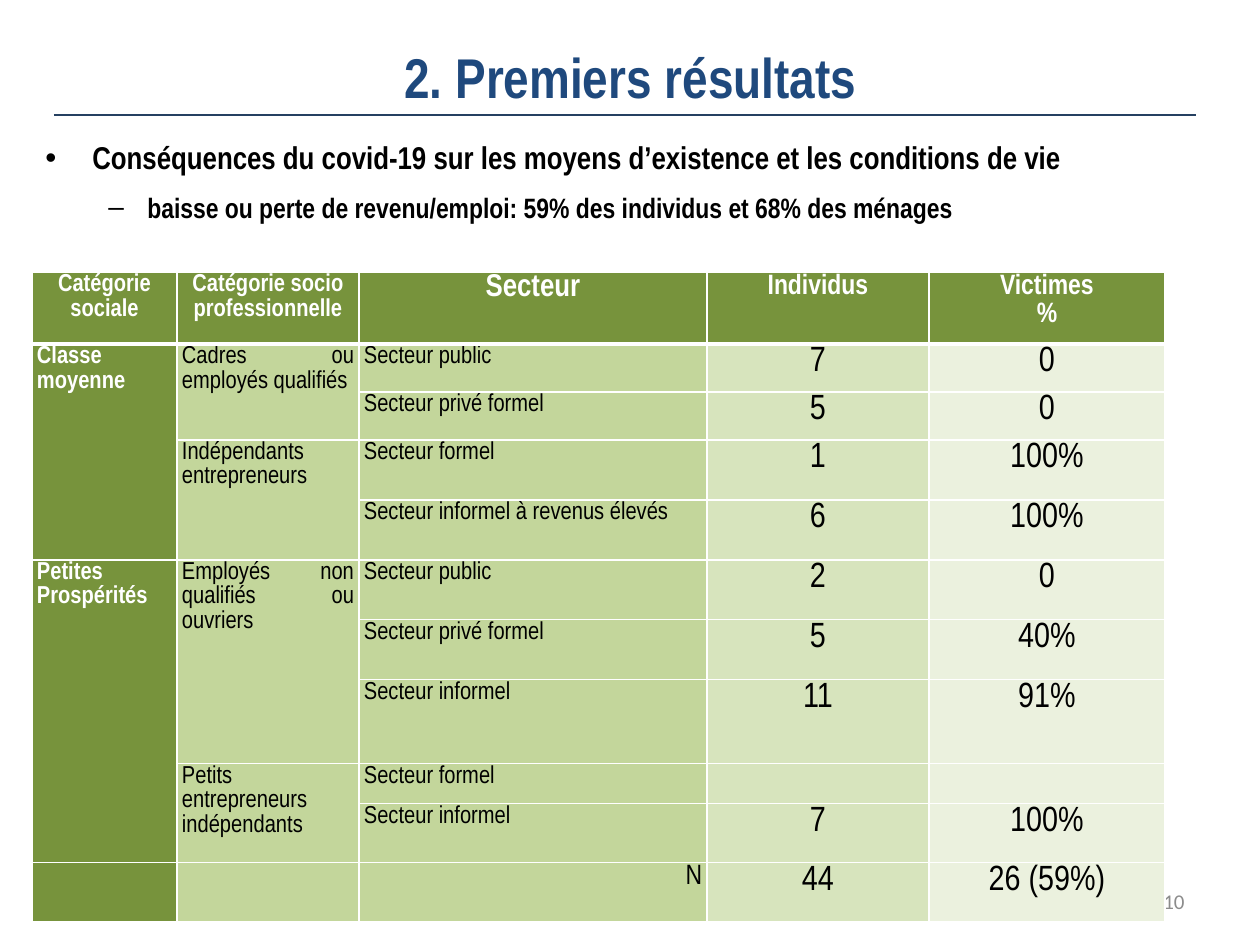
from dataclasses import dataclass

from lxml import etree
from pptx import Presentation
from pptx.dml.color import RGBColor
from pptx.enum.shapes import MSO_CONNECTOR
from pptx.enum.text import MSO_ANCHOR, PP_ALIGN
from pptx.oxml.ns import qn
from pptx.util import Emu, Pt

LEFT, CENTER, RIGHT, JUSTIFY = PP_ALIGN.LEFT, PP_ALIGN.CENTER, PP_ALIGN.RIGHT, PP_ALIGN.JUSTIFY
TOP, MIDDLE = MSO_ANCHOR.TOP, MSO_ANCHOR.MIDDLE
STRAIGHT = MSO_CONNECTOR.STRAIGHT
PX = 914400 / 126


@dataclass(frozen=True)
class Theme:
    """Colours, fonts and type sizes of the slide."""
    font: str = "Arial Narrow"
    number_font: str = "Calibri"
    title: str = "1F497D"
    rule: str = "254061"
    text: str = "000000"
    muted: str = "8C8C8C"
    white: str = "FFFFFF"
    columns: tuple = ("77933C", "C3D69B", "C3D69B", "D7E4BD", "EBF1DE")
    title_size: int = 32
    bullet_sizes: tuple = (18, 16)
    header_sizes: tuple = (14, 14, 18, 16, 16)
    label_size: int = 14
    total_size: int = 16
    value_size: int = 20
    number_size: int = 12


def emu(px):
    """Turn px into EMU."""
    return Emu(round(px * PX))


class SlideBuilder:
    """Holds the theme and the current slide."""

    def __init__(self, slide, theme):
        self.s, self.t = slide, theme

    def run(self, p, text, size, color, bold=False, font=None):
        """Add one styled run."""
        r = p.add_run()
        r.text = text
        r.font.size, r.font.bold = Pt(size), bold
        r.font.name = font or self.t.font
        r.font.color.rgb = RGBColor.from_string(color)

    def box(self, x, y, w, h, anchor=TOP):
        """Add a wrapping text box and return its text frame."""
        tf = self.s.shapes.add_textbox(emu(x), emu(y), emu(w), emu(h)).text_frame
        tf.word_wrap, tf.vertical_anchor = True, anchor
        return tf

    def label(self, x, y, w, h, text, align, **style):
        """Add a one-paragraph text box."""
        p = self.box(x, y, w, h, MIDDLE).paragraphs[0]
        p.alignment = align
        self.run(p, text, **style)

    def bullets(self, x, y, w, h, items):
        """Add a bulleted list of (level, char, margin, hang, text)."""
        tf = self.box(x, y, w, h)
        for i, (level, char, margin, hang, text) in enumerate(items):
            p = tf.add_paragraph() if i else tf.paragraphs[0]
            p.level, p.alignment = level, JUSTIFY
            p.space_before, p.space_after = Pt(2), Pt(6)
            pPr = p._p.get_or_add_pPr()
            pPr.set("marL", str(emu(margin)))
            pPr.set("indent", str(-emu(hang)))
            etree.SubElement(pPr, qn("a:buFont"), typeface="Arial")
            etree.SubElement(pPr, qn("a:buChar"), char=char)
            self.run(p, text, self.t.bullet_sizes[level], self.t.text, True)

    def rule(self, x1, x2, y):
        """Add a thin horizontal line."""
        sp = self.s.shapes.add_connector(STRAIGHT, emu(x1), emu(y), emu(x2), emu(y))
        sp.line.width = Pt(0.75)
        sp.line.color.rgb = RGBColor.from_string(self.t.rule)
        etree.SubElement(sp._element.spPr, qn("a:effectLst"))

    def borders(self, cell, **widths):
        """Draw white borders of the given point widths."""
        tcPr = cell._tc.get_or_add_tcPr()
        for side in "LRTB":
            ln = etree.SubElement(tcPr, qn(f"a:ln{side}"), w=str(Pt(widths.get(side, 1))))
            fill = etree.SubElement(ln, qn("a:solidFill"))
            etree.SubElement(fill, qn("a:srgbClr"), val=self.t.white)

    def cell(self, cell, text, fill, align, size, color, bold, **widths):
        """Fill one table cell."""
        self.borders(cell, **widths)
        cell.fill.solid()
        cell.fill.fore_color.rgb = RGBColor.from_string(fill)
        cell.margin_left = cell.margin_right = emu(5)
        cell.margin_top = cell.margin_bottom = 0
        if not text:
            return
        p = cell.text_frame.paragraphs[0]
        p.alignment, p.line_spacing = align, 1.07
        for i, line in enumerate(text.split("\n")):
            if i:
                p.add_line_break()
            self.run(p, line, size, color, bold)

    def table(self, x, y, widths, heights, rows, spans):
        """Add the results table; spans are (row, column, row count)."""
        t = self.t
        table = self.s.shapes.add_table(len(heights), len(widths), emu(x), emu(y),
                                        emu(sum(widths)), emu(sum(heights))).table
        for col, w in zip(table.columns, widths):
            col.width = emu(w)
        for row, h in zip(table.rows, heights):
            row.height = emu(h)
        last = len(rows) - 1
        for i, row in enumerate(rows):
            for j, text in enumerate(row):
                head, value = i == 0, j > 2
                if head:
                    align, size = CENTER, t.header_sizes[j]
                elif value:
                    align, size = CENTER, t.value_size
                elif i == last:
                    align, size = RIGHT, t.total_size
                else:
                    align, size = JUSTIFY, t.label_size
                strong = head or j == 0
                self.cell(table.cell(i, j), text, t.columns[0 if head else j], align, size,
                          t.white if strong else t.text, strong,
                          B=3 if head else 1, T=3 if i == 1 else 1)
        for i, j, n in spans:
            table.cell(i, j).merge(table.cell(i + n - 1, j))


ROWS = [
    ("Catégorie sociale", "Catégorie socio\nprofessionnelle", "Secteur", "Individus", "Victimes\n%"),
    ("Classe moyenne", "Cadres ou employés qualifiés ", "Secteur public", "7", "0"),
    ("", "", "Secteur privé formel", "5", "0"),
    ("", "Indépendants entrepreneurs", "Secteur formel", "1", "100%"),
    ("", "", "Secteur informel à revenus élevés", "6", "100%"),
    ("Petites Prospérités", "Employés non qualifiés ou ouvriers", "Secteur public", "2", "0"),
    ("", "", "Secteur privé formel", "5", "40%"),
    ("", "", "Secteur informel", "11", "91%"),
    ("", "Petits entrepreneurs indépendants", "Secteur formel", "", ""),
    ("", "", "Secteur informel", "7", "100%"),
    ("", "", "N", "44", "26 (59%)"),
]
SPANS = [(1, 0, 4), (5, 0, 5), (1, 1, 2), (3, 1, 2), (5, 1, 3), (8, 1, 2)]
WIDTHS = [145, 182, 348, 222, 236]
HEIGHTS = [63, 48, 48, 60, 60, 60, 60, 84, 40, 59, 59]
BULLETS = [
    (0, "•", 47, 47, "Conséquences du covid-19 sur les moyens d’existence et les conditions de vie"),
    (1, "–", 102, 39, "baisse ou perte de revenu/emploi: 59% des individus et 68% des ménages"),
]


def main():
    """Build and save the slide."""
    prs = Presentation()
    prs.slide_width, prs.slide_height = emu(1260), emu(945)
    t = Theme()
    b = SlideBuilder(prs.slides.add_slide(prs.slide_layouts[6]), t)
    b.label(64, 38, 1133, 77, "2. Premiers résultats", CENTER,
            size=t.title_size, color=t.title, bold=True)
    b.bullets(33, 132, 1162, 764, BULLETS)
    b.rule(54, 1196, 115)
    b.label(903, 876, 294, 50, "10", RIGHT,
            size=t.number_size, color=t.muted, font=t.number_font)
    b.table(32, 272, WIDTHS, HEIGHTS, ROWS, SPANS)
    prs.save("out.pptx")


if __name__ == "__main__":
    main()
